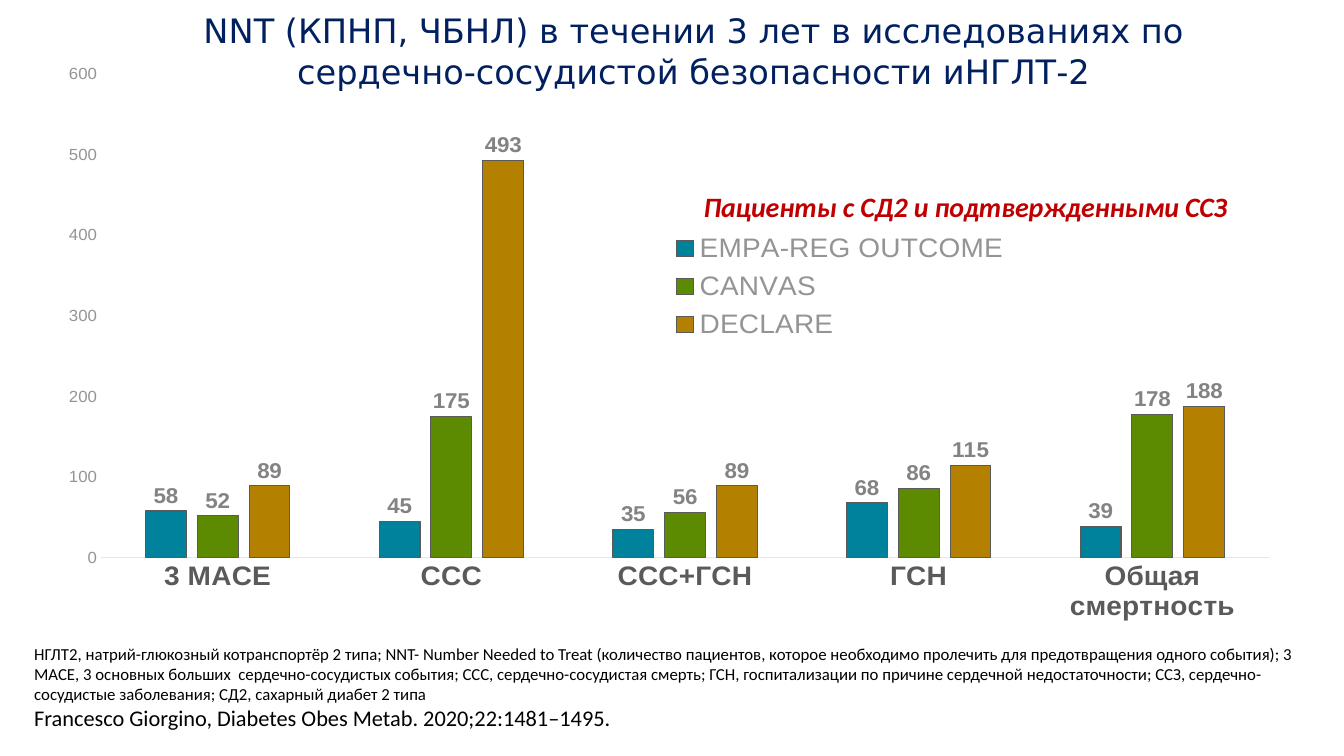
import pptx
import pptx.chart.data
import pptx.dml.color
import pptx.enum.chart
import pptx.enum.text
import pptx.oxml
import pptx.oxml.ns
import pptx.util

Cm, Pt = pptx.util.Cm, pptx.util.Pt
RGBColor = pptx.dml.color.RGBColor
XL = pptx.enum.chart
PP_ALIGN = pptx.enum.text.PP_ALIGN

# Colours
NAVY = RGBColor(0x00, 0x20, 0x60)
RED = RGBColor(0xC0, 0x00, 0x00)
BLACK = RGBColor(0x00, 0x00, 0x00)
DARK_GREY = RGBColor(0x5A, 0x5A, 0x5A)
LABEL_GREY = RGBColor(0x83, 0x83, 0x83)
SOFT_GREY = RGBColor(0x94, 0x94, 0x94)
PALE_GREY = RGBColor(0xE6, 0xE6, 0xE6)
TEAL = RGBColor(0x00, 0x82, 0x9C)
GREEN = RGBColor(0x5C, 0x8A, 0x00)
OCHRE = RGBColor(0xB4, 0x80, 0x00)

# Content: (text, size) for each paragraph
TITLE = [
    ("NNT (КПНП, ЧБНЛ) в течении 3 лет в исследованиях по", 24),
    (" сердечно-сосудистой безопасности иНГЛТ-2 ", 24),
]
POPULATION = [("Пациенты с СД2 и подтвержденными ССЗ", 20)]
FOOTNOTE = [
    ("НГЛТ2, натрий-глюкозный котранспортёр 2 типа; NNT- Number Needed to Treat "
     "(количество пациентов, которое необходимо пролечить для предотвращения "
     "одного события); 3 MACE, 3 основных больших  сердечно-сосудистых события; "
     "ССС, сердечно-сосудистая смерть; ГСН, госпитализации по причине сердечной "
     "недостаточности; ССЗ, сердечно-сосудистые заболевания; "
     "СД2, сахарный диабет 2 типа", 12),
    ("Francesco Giorgino, Diabetes Obes Metab. 2020;22:1481–1495.", 16),
]
OUTCOMES = ["3 MACE", "ССС", "ССС+ГСН", "ГСН", "Общая смертность"]
TRIALS = [
    ("EMPA-REG OUTCOME", TEAL, (58, 45, 35, 68, 39)),
    ("CANVAS", GREEN, (52, 175, 56, 86, 178)),
    ("DECLARE", OCHRE, (89, 493, 89, 115, 188)),
]

# Places: left, top, width, height in cm
CHART_AT = (1.09, 1.65, 30.91, 14.02)
TITLE_AT = (2.74, 0.13, 29.49, 2.31)
POPULATION_AT = (17.48, 4.65, 13.89, 1.12)
FOOTNOTE_AT = (0.61, 16.1, 32.87, 2.49)
# Shares of the chart area: x, y, w, h
PLOT_SHARE = (0.047, 0.016, 0.953, 0.91)
LEGEND_SHARE = (0.5, 0.3, 0.3, 0.23)


def set_font(font, name, size, color, bold=False, italic=False):
    font.name, font.size = name, Pt(size)
    font.color.rgb = color
    font.bold, font.italic = bold, italic


def add_text(slide, place, paragraphs, name, color, align=PP_ALIGN.LEFT,
             wrap=True, emphasis=False, spacing=None):
    frame = slide.shapes.add_textbox(*map(Cm, place)).text_frame
    frame.word_wrap = wrap
    frame.auto_size = pptx.enum.text.MSO_AUTO_SIZE.SHAPE_TO_FIT_TEXT
    for index, (text, size) in enumerate(paragraphs):
        paragraph = frame.add_paragraph() if index else frame.paragraphs[0]
        paragraph.alignment = align
        run = paragraph.add_run()
        run.text = text
        set_font(run.font, name, size, color, emphasis, emphasis)
        if spacing is not None:
            run.font._element.set("spc", str(spacing))


def manual_layout(shares, inner=False):
    target = '<c:layoutTarget val="inner"/>' if inner else ""
    modes = "".join(f'<c:{axis}Mode val="edge"/>' for axis in "xy")
    sizes = "".join(f'<c:{key} val="{share}"/>' for key, share in zip("xywh", shares))
    return pptx.oxml.parse_xml(
        f'<c:layout {pptx.oxml.ns.nsdecls("c")}><c:manualLayout>'
        f"{target}{modes}{sizes}</c:manualLayout></c:layout>")


def add_nnt_chart(slide):
    data = pptx.chart.data.CategoryChartData()
    data.categories = OUTCOMES
    for trial, _, values in TRIALS:
        data.add_series(trial, values)
    chart = slide.shapes.add_chart(
        XL.XL_CHART_TYPE.COLUMN_CLUSTERED, *map(Cm, CHART_AT), data).chart
    chart.has_title = False
    set_font(chart.font, "Arial", 10, DARK_GREY)

    # Columns and their value labels
    plot = chart.plots[0]
    plot.gap_width, plot.overlap = 219, -27
    plot.vary_by_categories = False
    for series, (_, color, _) in zip(plot.series, TRIALS):
        series.format.fill.solid()
        series.format.fill.fore_color.rgb = color
        series.format.line.color.rgb = DARK_GREY
        series.format.line.width = Pt(0.75)
        labels = series.data_labels
        labels.show_value = True
        labels.position = XL.XL_LABEL_POSITION.OUTSIDE_END
        set_font(labels.font, "Arial", 16, LABEL_GREY, bold=True)

    # Axes
    outcomes, nnt = chart.category_axis, chart.value_axis
    for axis in (outcomes, nnt):
        axis.has_major_gridlines = False
        axis.major_tick_mark = axis.minor_tick_mark = XL.XL_TICK_MARK.NONE
    set_font(outcomes.tick_labels.font, "Arial", 20, DARK_GREY, bold=True)
    outcomes.format.line.color.rgb = PALE_GREY
    outcomes.format.line.width = Pt(0.75)
    set_font(nnt.tick_labels.font, "Arial", 12, SOFT_GREY)
    nnt.format.line.fill.background()
    nnt.minimum_scale, nnt.maximum_scale, nnt.major_unit = 0, 600, 100

    # Legend and manual positions
    chart.has_legend = True
    legend = chart.legend
    legend.position = XL.XL_LEGEND_POSITION.RIGHT
    legend.include_in_layout = False
    set_font(legend.font, "Arial", 20, SOFT_GREY)
    plot_area = chart._chartSpace.chart.plotArea
    for parent, layout, index in (
            (plot_area, manual_layout(PLOT_SHARE, inner=True), 0),
            (legend._element, manual_layout(LEGEND_SHARE), 1)):
        for old in parent.findall(pptx.oxml.ns.qn("c:layout")):
            parent.remove(old)
        parent.insert(index, layout)


def main():
    deck = pptx.Presentation()
    deck.slide_width, deck.slide_height = Cm(33.87), Cm(19.05)
    slide = deck.slides.add_slide(deck.slide_layouts[6])
    add_nnt_chart(slide)
    add_text(slide, TITLE_AT, TITLE, "DejaVu Sans", NAVY, align=PP_ALIGN.CENTER)
    add_text(slide, FOOTNOTE_AT, FOOTNOTE, "Calibri", BLACK)
    add_text(slide, POPULATION_AT, POPULATION, "Calibri", RED,
             wrap=False, emphasis=True, spacing=-10)
    deck.save("out.pptx")


if __name__ == "__main__":
    main()
